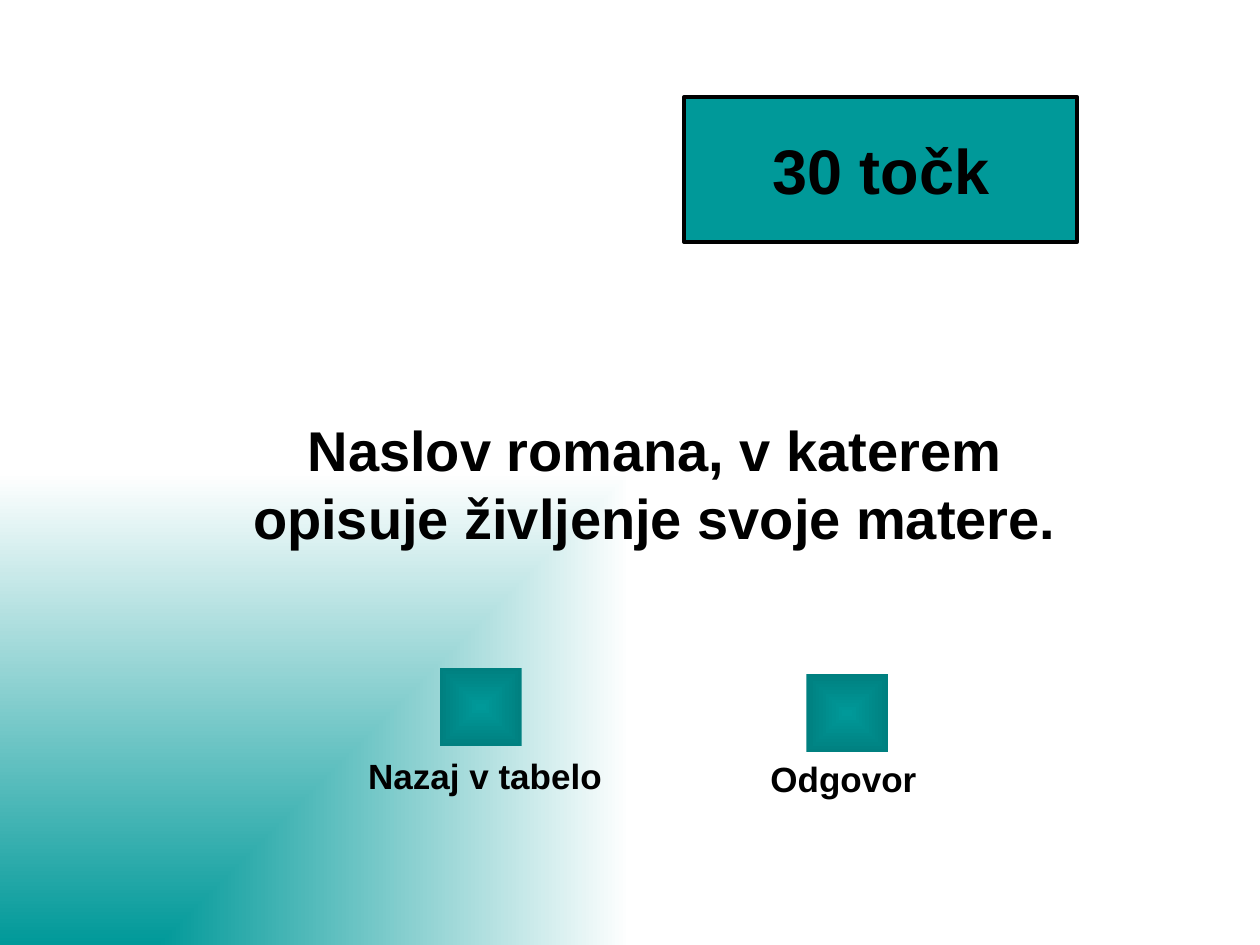
from dataclasses import dataclass

from pptx import Presentation
from pptx.dml.color import RGBColor
from pptx.enum.shapes import MSO_SHAPE as Preset
from pptx.enum.text import MSO_ANCHOR as Anchor, PP_ALIGN as Align
from pptx.oxml import parse_xml
from pptx.oxml.ns import nsdecls, qn
from pptx.util import Inches, Pt


@dataclass(frozen=True)
class Theme:
    font: str = "Arial"
    ink: RGBColor = RGBColor.from_string("000000")
    teal: RGBColor = RGBColor.from_string("009999")
    dark_teal: RGBColor = RGBColor.from_string("008080")
    white: RGBColor = RGBColor.from_string("FFFFFF")
    score_size: int = 36
    question_size: int = 32
    label_size: int = 20
    outline: float = 2.25


THEME = Theme()


def inches(box):
    return [Inches(length) for length in box]


def fill_rect_gradient(owner, fill, colors, focus):
    fill.gradient()
    for stop, color in zip(fill.gradient_stops, colors):
        stop.color.rgb = color
    gradient = owner.element.find(".//" + qn("a:gradFill"))
    sides = " ".join(f'{side}="{share * 1000}"' for side, share in zip("ltrb", focus))
    path = parse_xml(
        f'<a:path {nsdecls("a")} path="rect"><a:fillToRect {sides}/></a:path>'
    )
    gradient.replace(gradient.find(qn("a:lin")), path)


def write_text(shape, text, size, anchor=Anchor.MIDDLE, wrap=True):
    frame = shape.text_frame
    frame.word_wrap = wrap
    frame.vertical_anchor = anchor
    para = frame.paragraphs[0]
    para.text = text
    para.alignment = Align.CENTER
    para.font.name = THEME.font
    para.font.size = Pt(size)
    para.font.bold = True
    para.font.color.rgb = THEME.ink


def add_score(page, box, text):
    card = page.shapes.add_shape(Preset.RECTANGLE, *inches(box))
    card.shadow.inherit = False
    card.fill.solid()
    card.fill.fore_color.rgb = THEME.teal
    card.line.color.rgb = THEME.ink
    card.line.width = Pt(THEME.outline)
    write_text(card, text, THEME.score_size, wrap=False)


def add_question(page, box, text):
    question = page.shapes.add_textbox(*inches(box))
    write_text(question, text, THEME.question_size)


def add_button(page, button_box, label_box, text):
    label = page.shapes.add_textbox(*inches(label_box))
    write_text(label, text, THEME.label_size, Anchor.TOP)
    button = page.shapes.add_shape(Preset.ACTION_BUTTON_CUSTOM, *inches(button_box))
    button.shadow.inherit = False
    button.line.fill.background()
    fill_rect_gradient(
        button, button.fill, (THEME.teal, THEME.dark_teal), (50, 50, 50, 50)
    )


def main():
    deck = Presentation()
    deck.slide_width, deck.slide_height = Inches(10), Inches(7.5)
    page = deck.slides.add_slide(deck.slide_layouts[6])
    fill_rect_gradient(
        page, page.background.fill, (THEME.teal, THEME.white), (0, 100, 100, 0)
    )
    add_question(
        page,
        (1.6, 3.07, 7.2, 1.53),
        "Naslov romana, v katerem opisuje življenje svoje matere.",
    )
    add_score(page, (5.43, 0.77, 3.12, 1.15), "30 točk")
    add_button(
        page, (3.49, 5.3, 0.65, 0.62), (2.69, 5.94, 2.32, 0.43), "Nazaj v tabelo"
    )
    add_button(page, (6.4, 5.35, 0.65, 0.62), (5.73, 5.96, 1.93, 0.43), "Odgovor")
    deck.save("out.pptx")


if __name__ == "__main__":
    main()
